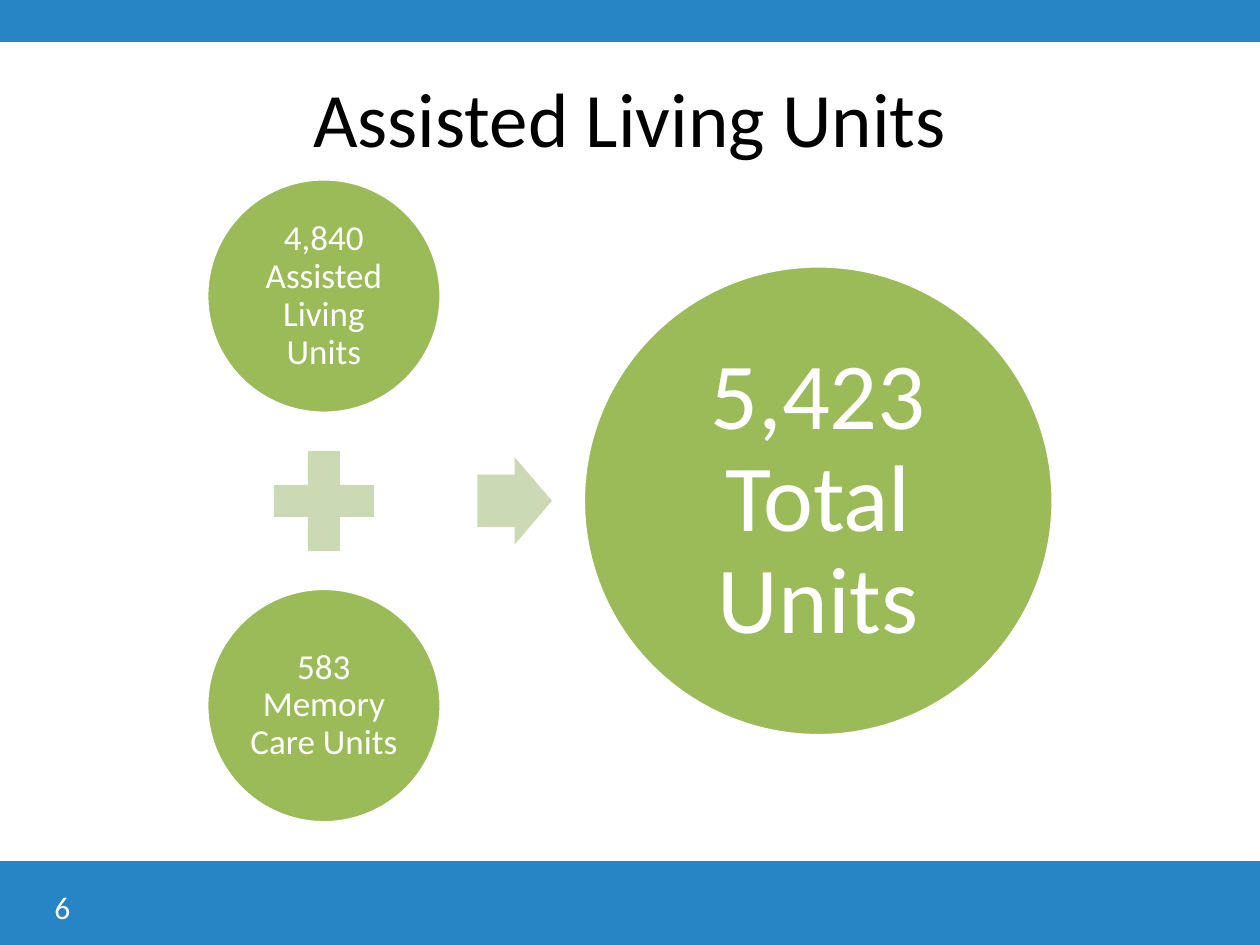
from dataclasses import dataclass

from pptx import Presentation
from pptx.dml.color import RGBColor
from pptx.enum.shapes import MSO_SHAPE as Shape
from pptx.enum.text import MSO_ANCHOR as Anchor, PP_ALIGN as Align
from pptx.util import Pt

COLORS = {
    "bar": "2784C5",
    "circle": "9BBB59",
    "sign": "CBDAB5",
    "white": "FFFFFF",
    "black": "000000",
}
FONT = "Calibri"
WIDTH, HEIGHT = 720, 540
ADDENDS_X, MIDDLE_Y, STEP_Y = 185.1, 286.2, 117


@dataclass
class Circle:
    text: str
    cx: float
    cy: float
    diameter: float
    size: float
    inset: float


@dataclass
class Sign:
    kind: Shape
    cx: float
    width: float
    height: float


@dataclass
class Label:
    text: str
    x: float
    y: float
    width: float
    height: float
    size: float
    color: str
    align: Align
    anchor: Anchor


CIRCLES = [
    Circle("4,840 Assisted Living Units", ADDENDS_X, MIDDLE_Y - STEP_Y, 134, 20, 2),
    Circle("583 Memory Care Units", ADDENDS_X, MIDDLE_Y + STEP_Y, 134, 20, 2),
    Circle("5,423 Total Units", 467.6, MIDDLE_Y, 268.5, 54, 5),
]
SIGNS = [
    Sign(Shape.MATH_PLUS, ADDENDS_X, 77.7, 77.7),
    Sign(Shape.RIGHT_ARROW, 294.1, 42.6, 49.8),
]
LABELS = [
    Label("Assisted Living Units", 36, 21.6, 648, 90, 44, "black",
          Align.CENTER, Anchor.MIDDLE),
    Label("6", 24, 504, 168, 29, 18, "white", Align.LEFT, Anchor.TOP),
]


def rgb(name: str) -> RGBColor:
    return RGBColor.from_string(COLORS[name])


def add_filled(s, kind: Shape, x: float, y: float, w: float, h: float, color: str):
    sp = s.shapes.add_shape(kind, Pt(x), Pt(y), Pt(w), Pt(h))
    sp.shadow.inherit = False
    sp.fill.solid()
    sp.fill.fore_color.rgb = rgb(color)
    sp.line.fill.background()
    return sp


def write(sp, text: str, size: float, color: str, align: Align, anchor: Anchor):
    tf = sp.text_frame
    tf.word_wrap = True
    tf.vertical_anchor = anchor
    p = tf.paragraphs[0]
    p.text = text
    p.alignment = align
    p.font.name = FONT
    p.font.size = Pt(size)
    p.font.color.rgb = rgb(color)
    return tf


def add_circle(s, c: Circle) -> None:
    radius = c.diameter / 2
    sp = add_filled(s, Shape.OVAL, c.cx - radius, c.cy - radius,
                    c.diameter, c.diameter, "circle")
    sp.line.color.rgb = rgb("white")
    sp.line.width = Pt(2)
    tf = write(sp, c.text, c.size, "white", Align.CENTER, Anchor.MIDDLE)
    tf.margin_left = tf.margin_right = tf.margin_top = tf.margin_bottom = Pt(c.inset)
    tf.paragraphs[0].line_spacing = 0.9


def add_sign(s, sign: Sign) -> None:
    sp = add_filled(s, sign.kind, sign.cx - sign.width / 2,
                    MIDDLE_Y - sign.height / 2, sign.width, sign.height, "sign")
    if sign.kind == Shape.RIGHT_ARROW:
        sp.adjustments[0] = 0.6
        sp.adjustments[1] = 0.5


def add_label(s, label: Label) -> None:
    sp = s.shapes.add_textbox(Pt(label.x), Pt(label.y), Pt(label.width), Pt(label.height))
    write(sp, label.text, label.size, label.color, label.align, label.anchor)


def main() -> None:
    prs = Presentation()
    prs.slide_width, prs.slide_height = Pt(WIDTH), Pt(HEIGHT)
    s = prs.slides.add_slide(prs.slide_layouts[6])
    for y, height in ((0, 24), (492, 48)):
        add_filled(s, Shape.RECTANGLE, 0, y, WIDTH, height, "bar")
    for label in LABELS:
        add_label(s, label)
    for circle in CIRCLES:
        add_circle(s, circle)
    for sign in SIGNS:
        add_sign(s, sign)
    prs.save("out.pptx")


if __name__ == "__main__":
    main()
